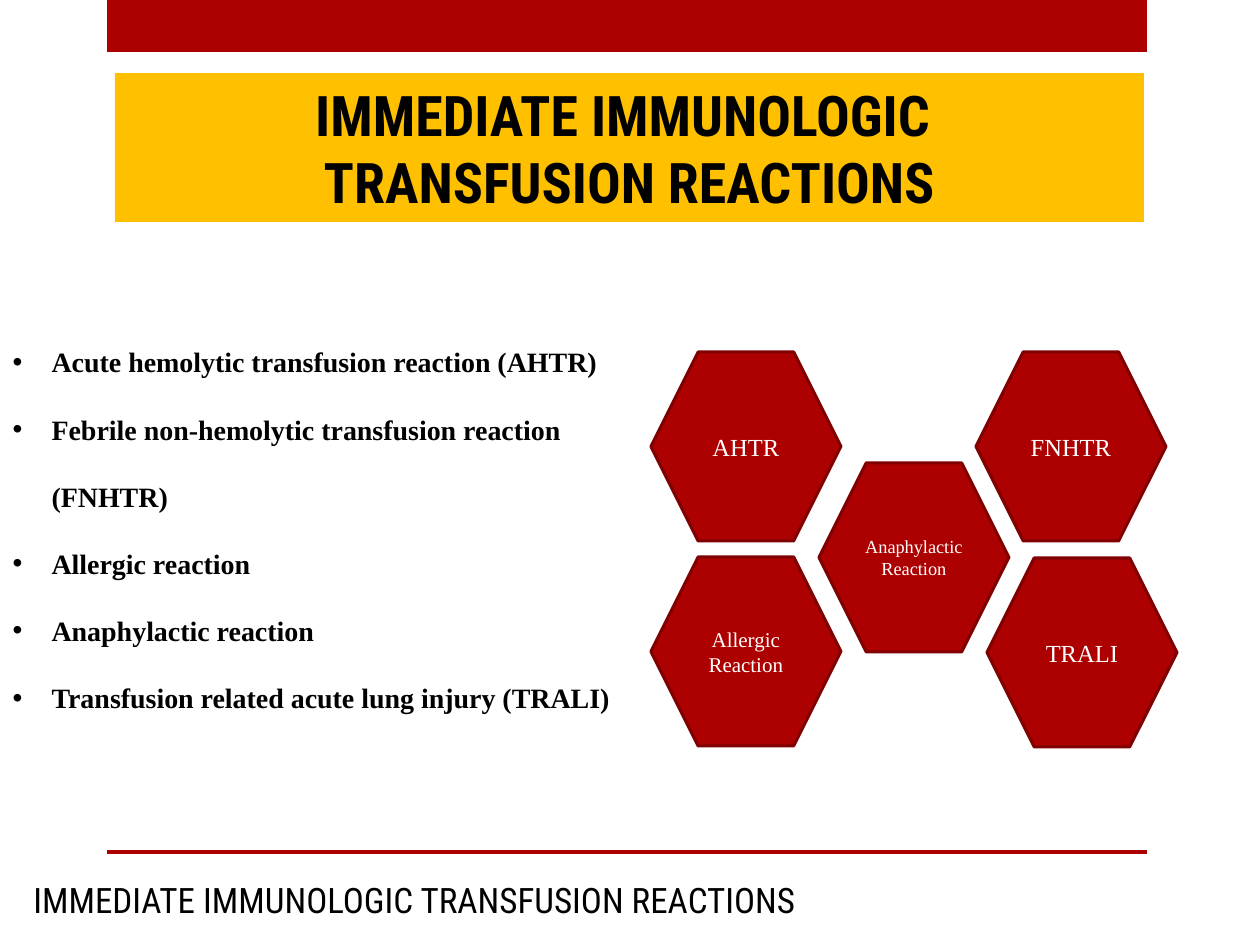
from pptx import Presentation
from pptx.dml.color import RGBColor
from pptx.enum.shapes import MSO_SHAPE as Preset
from pptx.enum.text import MSO_ANCHOR as Anchor, MSO_AUTO_SIZE as AutoSize, PP_ALIGN as Align
from pptx.util import Emu, Pt

RED = RGBColor(0xAD, 0x01, 0x01)
DARK_RED = RGBColor(0x80, 0x01, 0x01)
GOLD = RGBColor(0xFF, 0xC0, 0x00)
BLACK = RGBColor(0x00, 0x00, 0x00)
WHITE = RGBColor(0xFF, 0xFF, 0xFF)
SERIF = "Times New Roman"
CONDENSED = "Roboto Condensed"


def px(*lengths):
    """Turn pixels, 126 to the inch, into EMU."""
    return [Emu(round(length * 914400 / 126)) for length in lengths]


def write(box, lines, font, para_format):
    """Fill a box with one paragraph per line, all formatted alike."""
    frame = box.text_frame
    frame.text = "\n".join(lines)
    frame.word_wrap = True
    frame.auto_size = AutoSize.NONE
    for para in frame.paragraphs:
        for name, value in para_format.items():
            setattr(para, name, value)
        for span in para.runs:
            span.font.color.rgb = font["color"]
            for name in font.keys() - {"color"}:
                setattr(span.font, name, font[name])


deck = Presentation()
deck.slide_width, deck.slide_height = px(1260, 945)
page = deck.slides.add_slide(deck.slide_layouts[1])
title, body = page.placeholders

# Red bars at the top and above the footer
for top, height in ((0, 52), (850, 4)):
    bar = page.shapes.add_shape(Preset.RECTANGLE, *px(107, top, 1040, height))
    bar.shadow.inherit = False
    bar.fill.solid()
    bar.fill.fore_color.rgb = RED
    bar.line.fill.background()

# Title on gold
title.left, title.top, title.width, title.height = px(115, 73, 1029, 149)
title.fill.solid()
title.fill.fore_color.rgb = GOLD
write(title, ["IMMEDIATE IMMUNOLOGIC ", "TRANSFUSION REACTIONS"],
      {"name": CONDENSED, "size": Pt(32), "bold": True, "color": BLACK},
      {"alignment": Align.CENTER})
title.text_frame.vertical_anchor = Anchor.MIDDLE

# List of reactions
body.left, body.top, body.width, body.height = px(0, 305, 651, 420)
write(body, ["Acute hemolytic transfusion reaction (AHTR)",
             "Febrile non-hemolytic transfusion reaction (FNHTR)",
             "Allergic reaction",
             "Anaphylactic reaction",
             "Transfusion related acute lung injury (TRALI)"],
      {"name": SERIF, "size": Pt(16), "bold": True, "color": BLACK},
      {"line_spacing": 2.0, "space_before": Pt(0)})
indent, = px(39)
for para in body.text_frame.paragraphs:
    properties = para._p.get_or_add_pPr()
    properties.set("marL", str(indent))
    properties.set("indent", str(-indent))

# Hexagons
for left, top, label, size in ((651, 352, "AHTR", 14),
                               (976, 352, "FNHTR", 14),
                               (987, 558, "TRALI", 14),
                               (651, 557, "Allergic Reaction", 12),
                               (819, 463, "Anaphylactic Reaction", 10.5)):
    hexagon = page.shapes.add_shape(Preset.HEXAGON, *px(left, top, 190, 189))
    hexagon.shadow.inherit = False
    hexagon.fill.solid()
    hexagon.fill.fore_color.rgb = RED
    hexagon.line.color.rgb = DARK_RED
    hexagon.line.width = Pt(1.75)
    write(hexagon, [label], {"name": SERIF, "size": Pt(size), "color": WHITE},
          {"alignment": Align.CENTER})
    hexagon.text_frame.vertical_anchor = Anchor.MIDDLE

# Footer
footer = page.shapes.add_textbox(*px(21, 872, 1124, 55))
write(footer, ["IMMEDIATE IMMUNOLOGIC TRANSFUSION REACTIONS"],
      {"name": CONDENSED, "size": Pt(20), "color": BLACK}, {})

deck.save("out.pptx")
